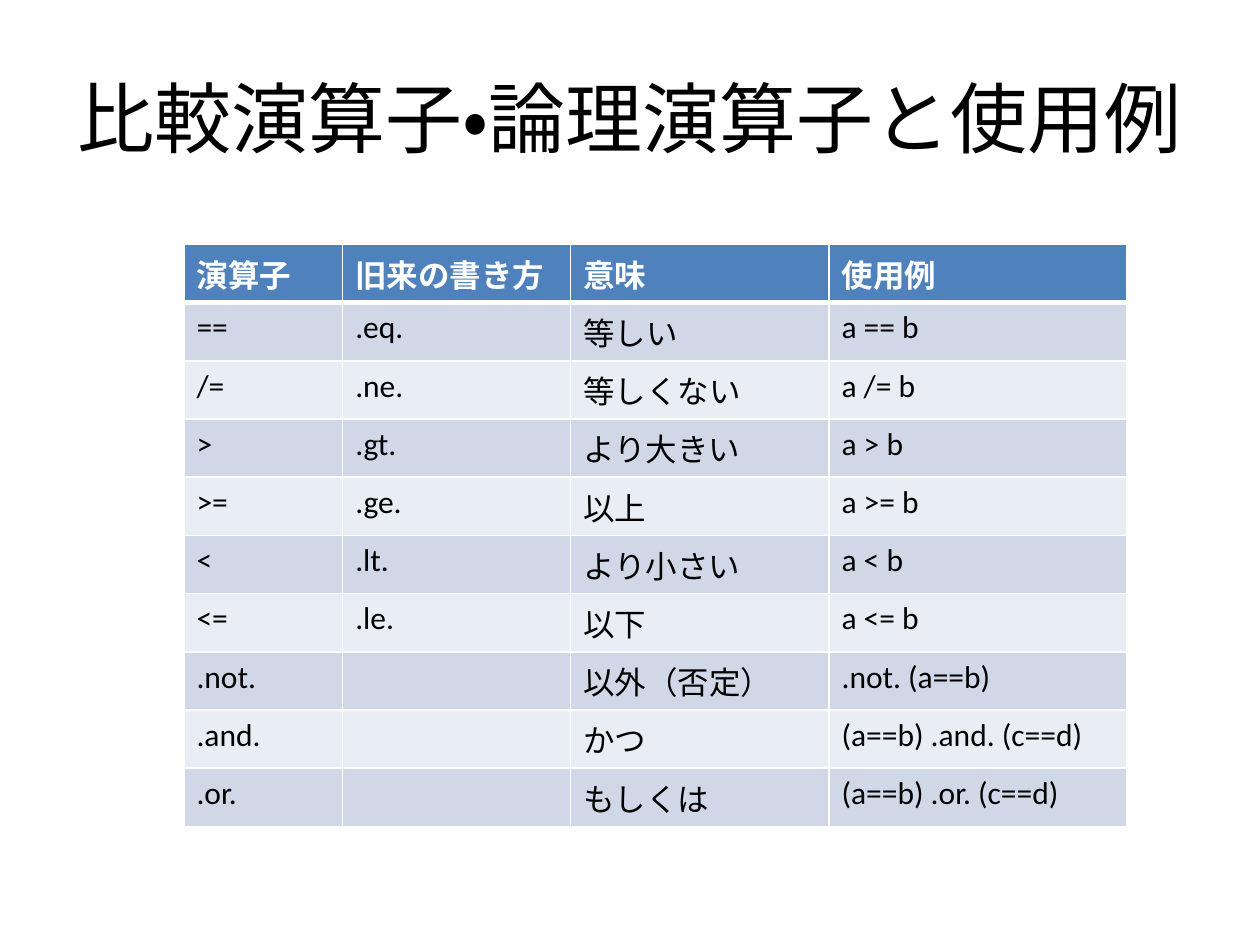
import pptx
import pptx.util
import pptx.dml.color
import pptx.enum.text
import pptx.enum.lang
import pptx.oxml
import pptx.oxml.ns

FONT = "Calibri"
COLORS = {"text": "000000", "white": "FFFFFF", "header": "4F81BD",
          "odd": "D0D8E8", "even": "E9EDF4"}
TITLE = "比較演算子・論理演算子と使用例"
ROWS = [
    ("演算子", "旧来の書き方", "意味", "使用例"),
    ("==", ".eq.", "等しい", "a == b"),
    ("/=", ".ne.", "等しくない", "a /= b"),
    (">", ".gt.", "より大きい", "a > b"),
    (">=", ".ge.", "以上", "a >= b"),
    ("<", ".lt.", "より小さい", "a < b"),
    ("<=", ".le.", "以下", "a <= b"),
    (".not.", "", "以外（否定）", ".not. (a==b)"),
    (".and.", "", "かつ", "(a==b) .and. (c==d)"),
    (".or.", "", "もしくは", "(a==b) .or. (c==d)"),
]
COLUMNS = (1.26, 1.81, 2.05, 2.36)
TABLE_HEIGHT = 4.62
ROW_HEIGHT = TABLE_HEIGHT / len(ROWS)
SLIDE_W, SLIDE_H = 10, 7.5


def rgb(name):
    return pptx.dml.color.RGBColor.from_string(COLORS[name])


def add_text(tf, text, size=18, color="text", bold=False, align=None):
    p = tf.paragraphs[0]
    p.alignment = align
    p.font.size = pptx.util.Pt(size)
    if not text:
        return
    r = p.add_run()
    r.text = text
    r.font.name = FONT
    r.font.size = pptx.util.Pt(size)
    r.font.bold = bold
    r.font.color.rgb = rgb(color)
    r.font.language_id = pptx.enum.lang.MSO_LANGUAGE_ID.JAPANESE


def set_borders(cell, widths):
    tc_pr = cell._tc.get_or_add_tcPr()
    for i, (side, width) in enumerate(widths.items()):
        tc_pr.insert(i, pptx.oxml.parse_xml(
            f'<a:ln{side} {pptx.oxml.ns.nsdecls("a")} w="{pptx.util.Pt(width)}">'
            f'<a:solidFill><a:srgbClr val="{COLORS["white"]}"/></a:solidFill>'
            f'</a:ln{side}>'))


def add_title(slide):
    sp = slide.shapes.add_textbox(*map(pptx.util.Inches, (
        SLIDE_W * 0.05, SLIDE_H * 0.04, SLIDE_W * 0.9, 1.25)))
    tf = sp.text_frame
    tf.word_wrap = True
    tf.vertical_anchor = pptx.enum.text.MSO_ANCHOR.MIDDLE
    add_text(tf, TITLE, size=44, align=pptx.enum.text.PP_ALIGN.CENTER)


def add_operator_table(slide):
    table = slide.shapes.add_table(len(ROWS), len(COLUMNS), *map(pptx.util.Inches, (
        1.46, 1.94, sum(COLUMNS), TABLE_HEIGHT))).table
    for column, width in zip(table.columns, COLUMNS):
        column.width = pptx.util.Inches(width)
    for i, row in enumerate(ROWS):
        table.rows[i].height = pptx.util.Inches(ROW_HEIGHT)
        header = i == 0
        fill = "header" if header else "odd" if i % 2 else "even"
        for j, text in enumerate(row):
            cell = table.cell(i, j)
            cell.fill.solid()
            cell.fill.fore_color.rgb = rgb(fill)
            add_text(cell.text_frame, text, bold=header,
                     color="white" if header else "text")
            set_borders(cell, {"L": 1, "R": 1, "T": 3 if i == 1 else 1,
                               "B": 3 if header else 1})


def main():
    prs = pptx.Presentation()
    prs.slide_width = pptx.util.Inches(SLIDE_W)
    prs.slide_height = pptx.util.Inches(SLIDE_H)
    slide = prs.slides.add_slide(prs.slide_layouts[6])
    add_title(slide)
    add_operator_table(slide)
    prs.save("out.pptx")


if __name__ == "__main__":
    main()
